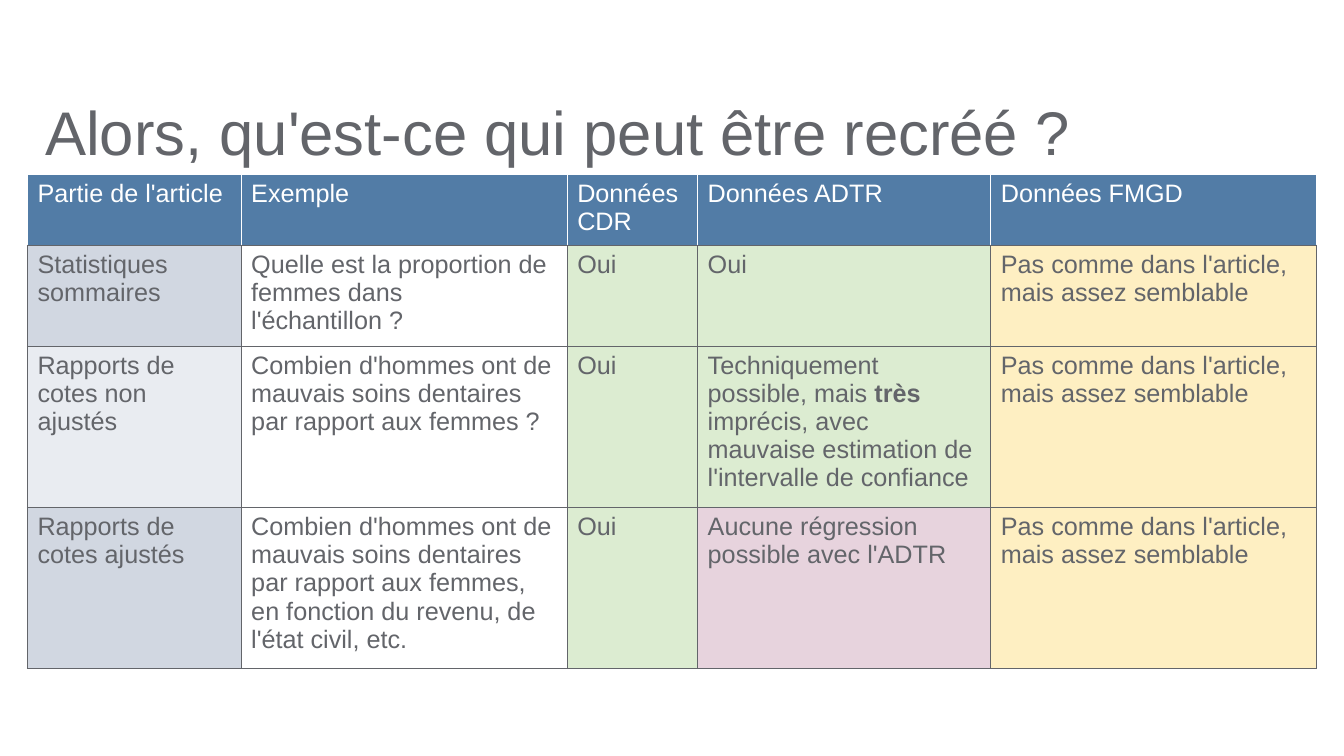
from lxml.etree import SubElement
from pptx import Presentation
from pptx.dml.color import RGBColor
from pptx.enum.text import MSO_ANCHOR
from pptx.oxml.ns import qn
from pptx.util import Pt

GREY, WHITE, BLUE = "63656A", "FFFFFF", "527CA6"
GREEN, YELLOW, PINK = "DCECD1", "FEEFC2", "E7D3DD"
DARK_BAND, LIGHT_BAND = "D1D7E1", "E9ECF1"

COLUMN_WIDTHS = [152.7, 232.9, 93.2, 209.4, 232.6]
ROW_HEIGHTS = [48.6, 67.7, 108.6, 111.6]
SIMILAR = "Pas comme dans l'article, mais assez semblable"
HEADINGS = ["Partie de l'article", "Exemple", "Données CDR", "Données ADTR", "Données FMGD"]
FINDINGS = [
    ["Statistiques sommaires", "Quelle est la proportion de femmes dans l'échantillon ?",
     "Oui", "Oui", SIMILAR],
    ["Rapports de cotes non ajustés",
     "Combien d'hommes ont de mauvais soins dentaires par rapport aux femmes ?", "Oui",
     "Techniquement possible, mais *très* imprécis, avec mauvaise estimation "
     "de l'intervalle de confiance", SIMILAR],
    ["Rapports de cotes ajustés",
     "Combien d'hommes ont de mauvais soins dentaires par rapport aux femmes, "
     "en fonction du revenu, de l'état civil, etc.",
     "Oui", "Aucune régression possible avec l'ADTR", SIMILAR],
]
FILLS = [
    [BLUE] * 5,
    [DARK_BAND, WHITE, GREEN, GREEN, YELLOW],
    [LIGHT_BAND, WHITE, GREEN, GREEN, YELLOW],
    [DARK_BAND, WHITE, GREEN, PINK, YELLOW],
]


def color(value):
    return RGBColor.from_string(value)


class SlideBuilder:
    """Holds the text style and the current slide."""

    def __init__(self, slide, font_name):
        self.slide = slide
        self.font_name = font_name

    def add_text(self, paragraph, text, size, text_color):
        for index, part in enumerate(text.split("*")):
            run = paragraph.add_run()
            run.text = part
            run.font.name = self.font_name
            run.font.size = Pt(size)
            run.font.bold = index % 2 == 1
            run.font.color.rgb = color(text_color)

    def add_title(self, text, left, top, width, height):
        shape = self.slide.shapes.add_textbox(Pt(left), Pt(top), Pt(width), Pt(height))
        text_frame = shape.text_frame
        text_frame.word_wrap = True
        text_frame.vertical_anchor = MSO_ANCHOR.MIDDLE
        paragraph = text_frame.paragraphs[0]
        paragraph.line_spacing = 0.9
        self.add_text(paragraph, text, 44, GREY)

    def add_borders(self, cell, side_color, bottom_color):
        properties = cell._tc.get_or_add_tcPr()
        sides = {"L": side_color, "R": side_color, "T": side_color, "B": bottom_color}
        for side, line_color in sides.items():
            line = SubElement(properties, qn(f"a:ln{side}"), w=str(Pt(1)))
            fill = SubElement(line, qn("a:solidFill"))
            SubElement(fill, qn("a:srgbClr"), val=line_color)

    def add_table(self, rows, fills, left, top, widths, heights):
        frame = self.slide.shapes.add_table(
            len(rows), len(widths), Pt(left), Pt(top), Pt(sum(widths)), Pt(sum(heights)))
        table = frame.table
        for column, width in zip(table.columns, widths):
            column.width = Pt(width)
        for row_index, (texts, row_fills) in enumerate(zip(rows, fills)):
            table.rows[row_index].height = Pt(heights[row_index])
            text_color = WHITE if row_index == 0 else GREY
            for column_index, (text, fill) in enumerate(zip(texts, row_fills)):
                cell = table.cell(row_index, column_index)
                self.add_borders(cell, text_color, GREY)
                cell.fill.solid()
                cell.fill.fore_color.rgb = color(fill)
                self.add_text(cell.text_frame.paragraphs[0], text, 18, text_color)


def main():
    presentation = Presentation()
    presentation.slide_width = Pt(960)
    presentation.slide_height = Pt(540)
    slide = presentation.slides.add_slide(presentation.slide_layouts[6])
    builder = SlideBuilder(slide, "Arial")
    builder.add_title("Alors, qu'est-ce qui peut être recréé ?", 25.2, 69.8, 921.6, 54.7)
    builder.add_table([HEADINGS] + FINDINGS, FILLS, 19.6, 124.8, COLUMN_WIDTHS, ROW_HEIGHTS)
    presentation.save("out.pptx")


if __name__ == "__main__":
    main()
